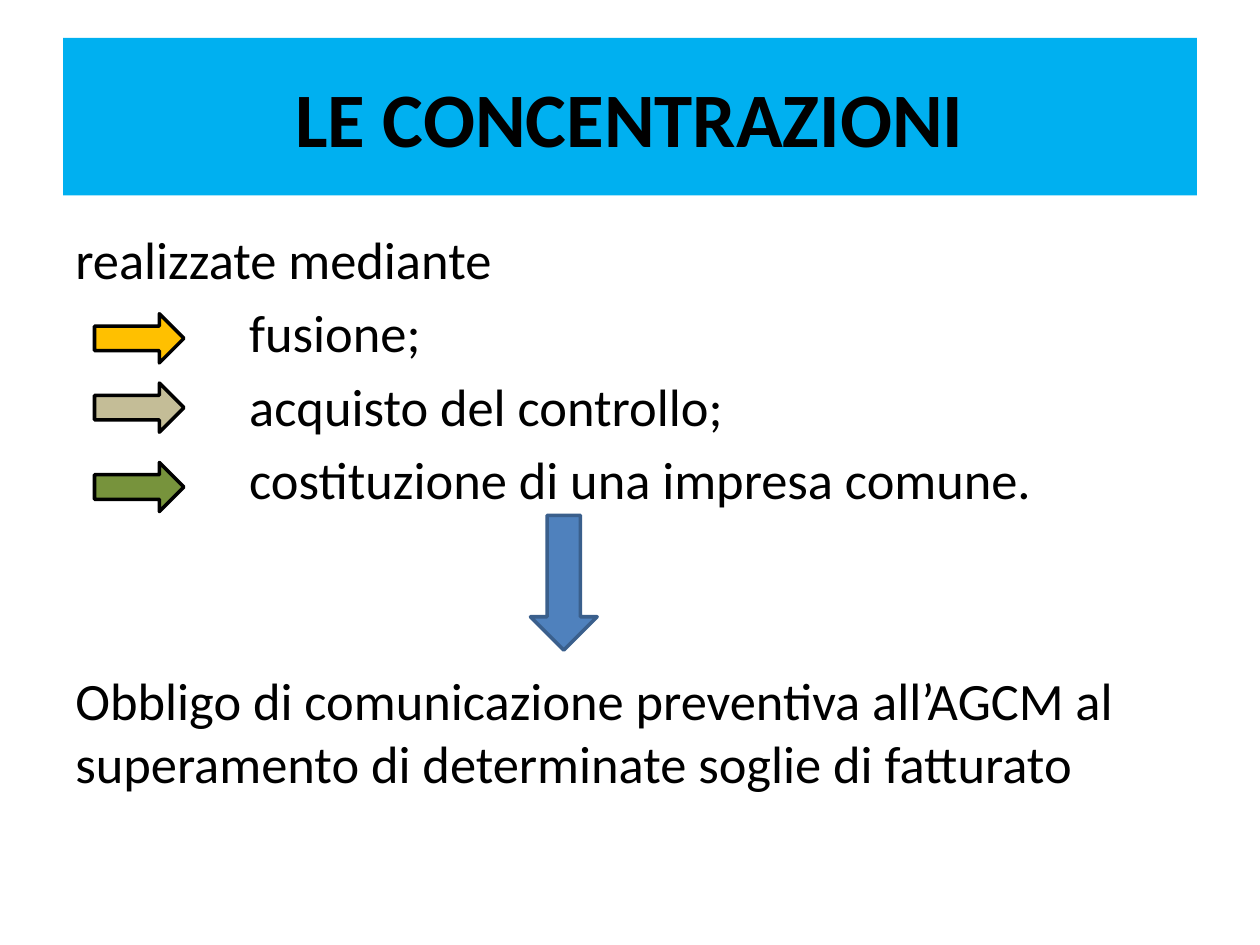
from pptx import Presentation
from pptx.dml.color import RGBColor
from pptx.enum.shapes import MSO_SHAPE
from pptx.enum.text import MSO_ANCHOR, PP_ALIGN
from pptx.util import Inches, Pt

FONT = "Calibri"
TITLE = "LE CONCENTRAZIONI"
PARAGRAPHS = [
    ("realizzate mediante", 0, 0),
    ("fusione;", 1.38, 6),
    ("acquisto del controllo;", 1.38, 6),
    ("costituzione di una impresa comune.", 1.38, 6),
    ("Obbligo di comunicazione preventiva all’AGCM al superamento "
     "di determinate soglie di fatturato", 0, 90),
]
ITEM_ARROWS = [(2.49, "FFC000"), (3.04, "C4BD97"), (3.67, "77933C")]


def color(value):
    """Turn a hex string into a colour."""
    return RGBColor.from_string(value)


def add_span(para, text, size, bold=False):
    """Add one black run to a paragraph."""
    span = para.add_run()
    span.text = text
    span.font.name = FONT
    span.font.size = Pt(size)
    span.font.bold = bold
    span.font.color.rgb = color("000000")


def add_title(page):
    """Place the title on its blue band."""
    title = page.shapes.title
    title.left, title.top = Inches(0.5), Inches(0.3)
    title.width, title.height = Inches(9), Inches(1.25)
    title.fill.solid()
    title.fill.fore_color.rgb = color("00B0F0")
    title.text_frame.vertical_anchor = MSO_ANCHOR.MIDDLE
    para = title.text_frame.paragraphs[0]
    para.alignment = PP_ALIGN.CENTER
    add_span(para, TITLE, 44, bold=True)


def add_body(page):
    """Write the body, indenting the list by the left margin."""
    box = page.shapes.add_textbox(Inches(0.5), Inches(1.75), Inches(9), Inches(4.95))
    frame = box.text_frame
    frame.word_wrap = True
    for index, (text, margin, space) in enumerate(PARAGRAPHS):
        para = frame.add_paragraph() if index else frame.paragraphs[0]
        para.space_before = Pt(space)
        properties = para._p.get_or_add_pPr()
        properties.set("marL", str(Inches(margin)))
        properties.set("indent", "0")
        add_span(para, text, 30)


def add_arrow(page, kind, left, top, width, height, fill, line):
    """Draw a block arrow with an outline."""
    arrow = page.shapes.add_shape(
        kind, Inches(left), Inches(top), Inches(width), Inches(height))
    arrow.shadow.inherit = False
    arrow.fill.solid()
    arrow.fill.fore_color.rgb = color(fill)
    arrow.line.color.rgb = color(line)
    arrow.line.width = Pt(2)


def main():
    """Build and save the slide."""
    deck = Presentation()
    deck.slide_width, deck.slide_height = Inches(10), Inches(7.5)
    page = deck.slides.add_slide(deck.slide_layouts[5])
    add_title(page)
    add_body(page)
    for top, fill in ITEM_ARROWS:
        add_arrow(page, MSO_SHAPE.RIGHT_ARROW, 0.75, top, 0.71, 0.39, fill, "000000")
    add_arrow(page, MSO_SHAPE.DOWN_ARROW, 4.21, 4.09, 0.53, 1.07, "4F81BD", "3A5F8C")
    deck.save("out.pptx")


if __name__ == "__main__":
    main()
